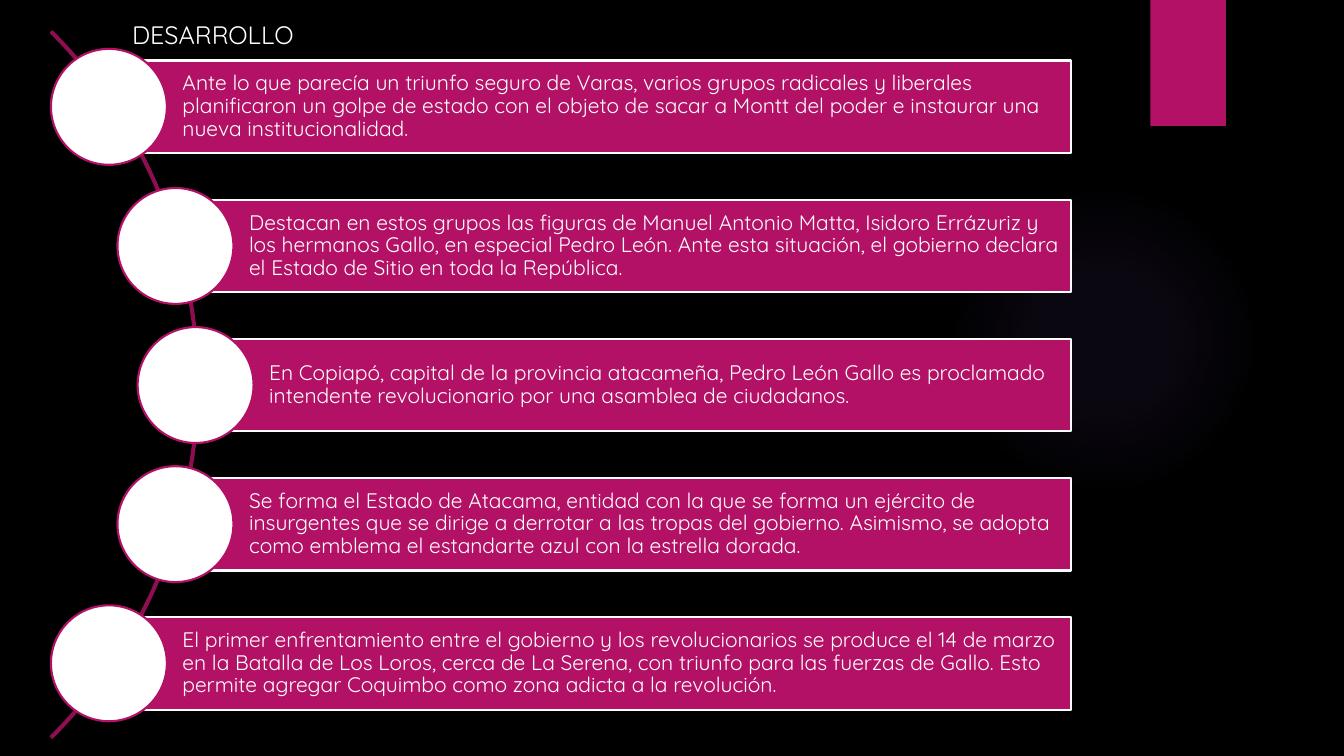
"""Build the slide on the course of the revolution, with five steps along an arc."""
from lxml import etree
from pptx import Presentation
from pptx.dml.color import RGBColor
from pptx.enum import shapes, text
from pptx.oxml import ns
from pptx.util import Inches, Pt

BLACK = RGBColor(0x00, 0x00, 0x00)
WHITE = RGBColor(0xFF, 0xFF, 0xFF)
MAGENTA = RGBColor(0xB3, 0x11, 0x66)
PLUM = RGBColor(0x8F, 0x0E, 0x52)
VIOLET = RGBColor(0x9B, 0x6B, 0xF2)
FONT = "Quicksand"

FIRST_TOP, STEP = 0.6, 1.38
BAR_RIGHT, BAR_HEIGHT, CIRCLE_SIZE = 10.62, 0.92, 1.15

STEPS = [
    (1.08, "Ante lo que parecía un triunfo seguro de Varas, varios grupos radicales y liberales "
           "planificaron un golpe de estado con el objeto de sacar a Montt del poder e instaurar "
           "una nueva institucionalidad."),
    (1.74, "Destacan en estos grupos las figuras de Manuel Antonio Matta, Isidoro Errázuriz y los "
           "hermanos Gallo, en especial Pedro León. Ante esta situación, el gobierno declara el "
           "Estado de Sitio en toda la República."),
    (1.94, "En Copiapó, capital de la provincia atacameña, Pedro León Gallo es proclamado "
           "intendente revolucionario por una asamblea de ciudadanos."),
    (1.74, "Se forma el Estado de Atacama, entidad con la que se forma un ejército de insurgentes "
           "que se dirige a derrotar a las tropas del gobierno. Asimismo, se adopta como emblema "
           "el estandarte azul con la estrella dorada."),
    (1.08, "El primer enfrentamiento entre el gobierno y los revolucionarios se produce el 14 de "
           "marzo en la Batalla de Los Loros, cerca de La Serena, con triunfo para las fuerzas de "
           "Gallo. Esto permite agregar Coquimbo como zona adicta a la revolución."),
]


def add_figure(page, kind, left, top, width, height, fill=None, line=None):
    figure = page.shapes.add_shape(
        kind, Inches(left), Inches(top), Inches(width), Inches(height))
    figure.shadow.inherit = False
    if fill is None:
        figure.fill.background()
    else:
        figure.fill.solid()
        figure.fill.fore_color.rgb = fill
    if line is None:
        figure.line.fill.background()
    else:
        figure.line.color.rgb = line
        figure.line.width = Pt(1.5)
    return figure


def write(frame, wording, size):
    frame.word_wrap = True
    para = frame.paragraphs[0]
    para.text = wording
    para.alignment = text.PP_ALIGN.LEFT
    para.font.name = FONT
    para.font.size = Pt(size)
    para.font.color.rgb = WHITE
    return para


def add_glow(page):
    glow = add_figure(page, shapes.MSO_SHAPE.OVAL, 9.41, 1.83, 3.08, 3.08)
    stops = "".join(
        f'<a:gs pos="{place * 1000}"><a:srgbClr val="{VIOLET}">'
        f'<a:alpha val="{alpha * 1000}"/></a:srgbClr></a:gs>'
        for place, alpha in [(0, 7), (36, 6), (69, 0)])
    gradient = etree.fromstring(
        f'<a:gradFill {ns.nsdecls("a")} rotWithShape="1"><a:gsLst>{stops}</a:gsLst>'
        '<a:path path="circle"><a:fillToRect l="50000" t="50000" r="50000" b="50000"/></a:path>'
        '</a:gradFill>')
    properties = glow.element.spPr
    properties.replace(properties.find(ns.qn("a:noFill")), gradient)


def add_arc(page):
    arc = add_figure(
        page, shapes.MSO_SHAPE.BLOCK_ARC, -7.94, -1.14, 9.91, 9.91, line=PLUM)
    for index, value in enumerate((189, 27, 0.002)):
        arc.adjustments[index] = value


def add_step(page, left, top, wording):
    bar = add_figure(page, shapes.MSO_SHAPE.RECTANGLE, left, top,
                     BAR_RIGHT - left, BAR_HEIGHT, MAGENTA, WHITE)
    frame = bar.text_frame
    frame.margin_left = Inches(0.73)
    frame.margin_top = frame.margin_right = frame.margin_bottom = Inches(0.04)
    frame.vertical_anchor = text.MSO_ANCHOR.MIDDLE
    write(frame, wording, 15).line_spacing = 0.9
    add_figure(page, shapes.MSO_SHAPE.OVAL, left - CIRCLE_SIZE / 2,
               top + (BAR_HEIGHT - CIRCLE_SIZE) / 2,
               CIRCLE_SIZE, CIRCLE_SIZE, WHITE, MAGENTA)


def set_title(page, wording):
    title = page.shapes.title
    title.left, title.top = Inches(1.21), Inches(0.14)
    title.width, title.height = Inches(7.3), Inches(0.4)
    title.text_frame.vertical_anchor = text.MSO_ANCHOR.TOP
    title.text_frame.auto_size = text.MSO_AUTO_SIZE.SHAPE_TO_FIT_TEXT
    write(title.text_frame, wording, 18)


def main():
    deck = Presentation()
    deck.slide_width, deck.slide_height = Inches(13.33), Inches(7.5)
    page = deck.slides.add_slide(deck.slide_layouts.get_by_name("Title Only"))
    page.background.fill.solid()
    page.background.fill.fore_color.rgb = BLACK
    set_title(page, "DESARROLLO")
    add_glow(page)
    add_figure(page, shapes.MSO_SHAPE.RECTANGLE, 11.41, 0, 0.75, 1.25, MAGENTA)
    add_arc(page)
    for index, (left, wording) in enumerate(STEPS):
        add_step(page, left, FIRST_TOP + index * STEP, wording)
    deck.save("out.pptx")


if __name__ == "__main__":
    main()
